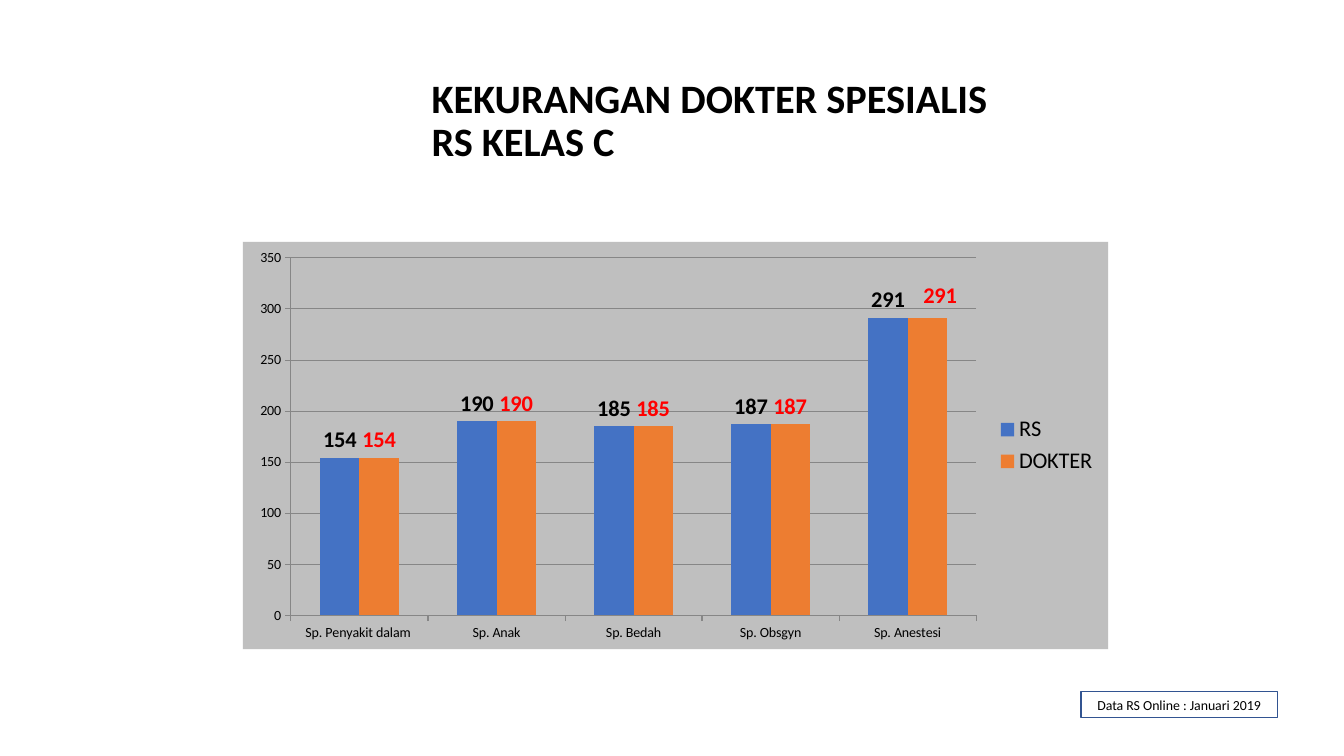
from lxml.etree import SubElement
from pptx import Presentation
from pptx.chart.data import CategoryChartData
from pptx.dml.color import RGBColor
from pptx.enum.chart import XL_CHART_TYPE, XL_LABEL_POSITION, XL_LEGEND_POSITION, XL_TICK_MARK
from pptx.enum.shapes import MSO_SHAPE
from pptx.enum.text import MSO_ANCHOR, PP_ALIGN
from pptx.oxml import parse_xml
from pptx.oxml.ns import nsdecls, qn
from pptx.util import Inches, Pt

BLACK = RGBColor(0x00, 0x00, 0x00)
RED = RGBColor(0xFF, 0x00, 0x00)
BLUE = RGBColor(0x44, 0x72, 0xC4)
ORANGE = RGBColor(0xED, 0x7D, 0x31)
NAVY = RGBColor(0x32, 0x54, 0x91)
GRID = RGBColor(0x86, 0x86, 0x86)
PANEL = RGBColor(0xBF, 0xBF, 0xBF)
FONT = "Calibri"

SPECIALTIES = ["Sp. Penyakit dalam ", "Sp. Anak", "Sp. Bedah", "Sp. Obsgyn", "Sp. Anestesi"]
SHORTAGES = [154, 190, 185, 187, 291]
# Series name, bar colour, label colour
SERIES = [("RS", BLUE, BLACK), ("DOKTER", ORANGE, RED)]


def style_font(font, size, color=BLACK, bold=False):
    font.name = FONT
    font.size = Pt(size)
    font.bold = bold
    font.color.rgb = color


def write_text(frame, text, size, bold=False, align=PP_ALIGN.LEFT,
               anchor=MSO_ANCHOR.MIDDLE, spacing=1.0):
    frame.word_wrap = True
    frame.vertical_anchor = anchor
    para = frame.paragraphs[0]
    para.text = text
    para.alignment = align
    para.line_spacing = spacing
    for span in para.runs:
        style_font(span.font, size, bold=bold)


def add_title(page, box):
    title = page.shapes.title
    title.left, title.top, title.width, title.height = map(Inches, box)
    write_text(title.text_frame, "KEKURANGAN DOKTER SPESIALIS\vRS KELAS C", 28.8,
               bold=True, spacing=0.9)


def style_axes(chart):
    for axis in (chart.category_axis, chart.value_axis):
        axis.major_tick_mark = XL_TICK_MARK.OUTSIDE
        axis.minor_tick_mark = XL_TICK_MARK.NONE
        axis.format.line.color.rgb = GRID
        style_font(axis.tick_labels.font, 10)
    chart.value_axis.minimum_scale = 0
    chart.value_axis.maximum_scale = 350
    chart.value_axis.major_unit = 50
    chart.value_axis.has_major_gridlines = True
    chart.value_axis.major_gridlines.format.line.color.rgb = GRID


def shift_label(point, x, y, color):
    """Move one value label by a fraction of the chart size."""
    label = point.data_label
    style_font(label.font, 16, color, bold=True)
    label.position = XL_LABEL_POSITION.OUTSIDE_END
    layout = parse_xml(f"<c:layout {nsdecls('c')}><c:manualLayout/></c:layout>")
    for axis, offset in (("x", x), ("y", y)):
        SubElement(layout[0], qn(f"c:{axis}")).set("val", str(offset))
    entry = point.data_label._dLbl
    entry.find(qn("c:idx")).addnext(layout)


def add_shortage_chart(page, box):
    data = CategoryChartData()
    data.categories = SPECIALTIES
    for name, _, _ in SERIES:
        data.add_series(name, SHORTAGES)
    chart = page.shapes.add_chart(XL_CHART_TYPE.COLUMN_CLUSTERED,
                                  *map(Inches, box), data).chart
    chart.has_title = False
    style_font(chart.font, 10)
    style_axes(chart)

    # Grey panel behind the chart
    panel = parse_xml(
        f"<c:spPr {nsdecls('c', 'a')}><a:solidFill><a:srgbClr val='{PANEL}'/></a:solidFill>"
        "<a:ln><a:noFill/></a:ln></c:spPr>")
    chart._chartSpace.find(qn("c:chart")).addnext(panel)

    # Legend
    chart.has_legend = True
    chart.legend.position = XL_LEGEND_POSITION.RIGHT
    chart.legend.include_in_layout = False
    style_font(chart.legend.font, 16)

    # Bars and their values
    plot = chart.plots[0]
    plot.vary_by_categories = False
    plot.gap_width = 150
    plot.overlap = 0
    for series, (_, bar_color, label_color) in zip(plot.series, SERIES):
        series.format.fill.solid()
        series.format.fill.fore_color.rgb = bar_color
        labels = series.data_labels
        labels.show_value = True
        labels.position = XL_LABEL_POSITION.OUTSIDE_END
        style_font(labels.font, 16, label_color, bold=True)
    shift_label(plot.series[1].points[4], 0.015, -0.012, RED)


def add_source_note(page, box):
    note = page.shapes.add_shape(MSO_SHAPE.RECTANGLE, *map(Inches, box))
    note.shadow.inherit = False
    note.fill.background()
    note.line.color.rgb = NAVY
    note.line.width = Pt(1)
    write_text(note.text_frame, "Data RS Online : Januari 2019", 9.9, align=PP_ALIGN.CENTER)


def main():
    deck = Presentation()
    deck.slide_width, deck.slide_height = Inches(13.33), Inches(7.5)
    page = deck.slides.add_slide(deck.slide_layouts[5])
    add_shortage_chart(page, (2.41, 2.4, 8.58, 4.04))
    add_title(page, (4.18, 0.65, 6.53, 1.12))
    add_source_note(page, (10.72, 6.86, 1.95, 0.26))
    deck.save("out.pptx")


if __name__ == "__main__":
    main()
